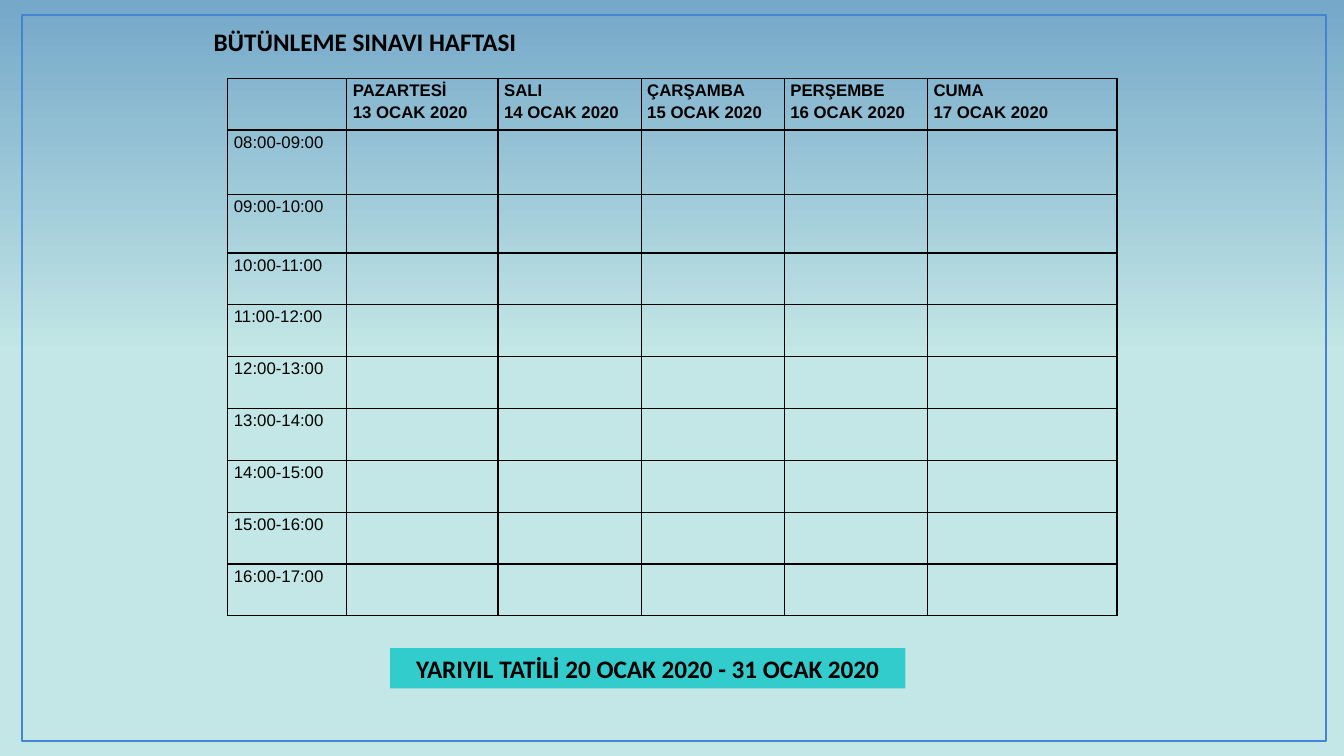
from lxml import etree
from pptx import Presentation
from pptx.dml.color import RGBColor
from pptx.enum import shapes, text
from pptx.oxml import ns
from pptx.util import Inches, Pt

BLACK = RGBColor(0x00, 0x00, 0x00)
FRAME_BLUE = RGBColor(0x45, 0x84, 0xD3)
PALE_AQUA = RGBColor(0xC3, 0xE7, 0xE6)
SKY_BLUE = RGBColor(0x75, 0xA8, 0xC9)
TURQUOISE = RGBColor(0x33, 0xCC, 0xCC)

DAYS = ("PAZARTESİ", "SALI", "ÇARŞAMBA", "PERŞEMBE", "CUMA")
FIRST_DATE = 13
FIRST_HOUR, LAST_HOUR = 8, 16
COLUMN_WIDTHS = (1.18, 1.5, 1.42, 1.42, 1.42, 1.88)
TOP_ROW_HEIGHTS = (0.51, 0.64, 0.58)


def write_text(frame, *lines, font="Calibri", size=18, bold=True,
               align=text.PP_ALIGN.LEFT, spacing=None):
    for index, line in enumerate(lines):
        paragraph = frame.paragraphs[0] if index == 0 else frame.add_paragraph()
        paragraph.alignment = align
        paragraph.line_spacing = spacing
        run = paragraph.add_run()
        run.text = line
        run.font.name = font
        run.font.size = Pt(size)
        run.font.bold = bold
        run.font.color.rgb = BLACK


def add_background(slide):
    fill = slide.background.fill
    fill.gradient()
    fill.gradient_angle = 90
    stops = ((0.53, PALE_AQUA), (1, SKY_BLUE))
    for stop, (position, color) in zip(fill.gradient_stops, stops):
        stop.position = position
        stop.color.rgb = color


def add_rectangle(slide, left, top, width, height):
    shape = slide.shapes.add_shape(
        shapes.MSO_SHAPE.RECTANGLE,
        Inches(left), Inches(top), Inches(width), Inches(height))
    shape.shadow.inherit = False
    return shape


def add_frame(slide, left, top, width, height):
    shape = add_rectangle(slide, left, top, width, height)
    shape.fill.background()
    shape.line.color.rgb = FRAME_BLUE
    shape.line.width = Pt(1.5)


def add_title(slide, left, top, width, height):
    box = slide.shapes.add_textbox(
        Inches(left), Inches(top), Inches(width), Inches(height))
    box.text_frame.word_wrap = False
    write_text(box.text_frame, "BÜTÜNLEME SINAVI HAFTASI")


def format_cell(cell):
    cell.margin_left = cell.margin_right = Inches(0.06)
    cell.margin_top = cell.margin_bottom = 0
    cell.fill.background()
    properties = cell._tc.get_or_add_tcPr()
    # Borders come before the fill in the cell properties
    for index, side in enumerate(("lnL", "lnR", "lnT", "lnB")):
        border = etree.Element(ns.qn(f"a:{side}"), w=str(Pt(1)))
        solid = etree.SubElement(border, ns.qn("a:solidFill"))
        etree.SubElement(solid, ns.qn("a:srgbClr"), val=str(BLACK))
        properties.insert(index, border)


def add_timetable(slide, left, top, width, height):
    hours = range(FIRST_HOUR, LAST_HOUR + 1)
    table = slide.shapes.add_table(
        len(hours) + 1, len(DAYS) + 1,
        Inches(left), Inches(top), Inches(width), Inches(height)).table
    table.first_row = table.horz_banding = False

    # The lower rows share the remaining height equally
    for column, column_width in zip(table.columns, COLUMN_WIDTHS):
        column.width = Inches(column_width)
    equal_count = len(table.rows) - len(TOP_ROW_HEIGHTS)
    equal_height = (height - sum(TOP_ROW_HEIGHTS)) / equal_count
    row_heights = TOP_ROW_HEIGHTS + (equal_height,) * equal_count
    for row, row_height in zip(table.rows, row_heights):
        row.height = Inches(row_height)

    for cell in table.iter_cells():
        format_cell(cell)

    # Day headings and hour labels
    for index, day in enumerate(DAYS):
        write_text(table.cell(0, index + 1).text_frame,
                   day, f"{FIRST_DATE + index} OCAK 2020",
                   font="Arial", size=12, spacing=1.15)
    for index, hour in enumerate(hours, start=1):
        write_text(table.cell(index, 0).text_frame,
                   f"{hour:02}:00-{hour + 1:02}:00",
                   font="Arial", size=12, bold=False, spacing=1.15)


def add_holiday_banner(slide, left, top, width, height):
    shape = add_rectangle(slide, left, top, width, height)
    shape.fill.solid()
    shape.fill.fore_color.rgb = TURQUOISE
    shape.line.fill.background()
    shape.text_frame.word_wrap = False
    write_text(shape.text_frame, "YARIYIL TATİLİ 20 OCAK 2020 - 31 OCAK 2020",
               align=text.PP_ALIGN.CENTER)


def main():
    presentation = Presentation()
    presentation.slide_width = Inches(13.33)
    presentation.slide_height = Inches(7.5)
    slide = presentation.slides.add_slide(presentation.slide_layouts[6])

    add_background(slide)
    add_frame(slide, 0.22, 0.15, 12.93, 7.2)
    add_title(slide, 2.02, 0.21, 3.29, 0.4)
    add_timetable(slide, 2.26, 0.78, 8.82, 5.33)
    add_holiday_banner(slide, 3.87, 6.43, 5.11, 0.4)
    presentation.save("out.pptx")


if __name__ == "__main__":
    main()
